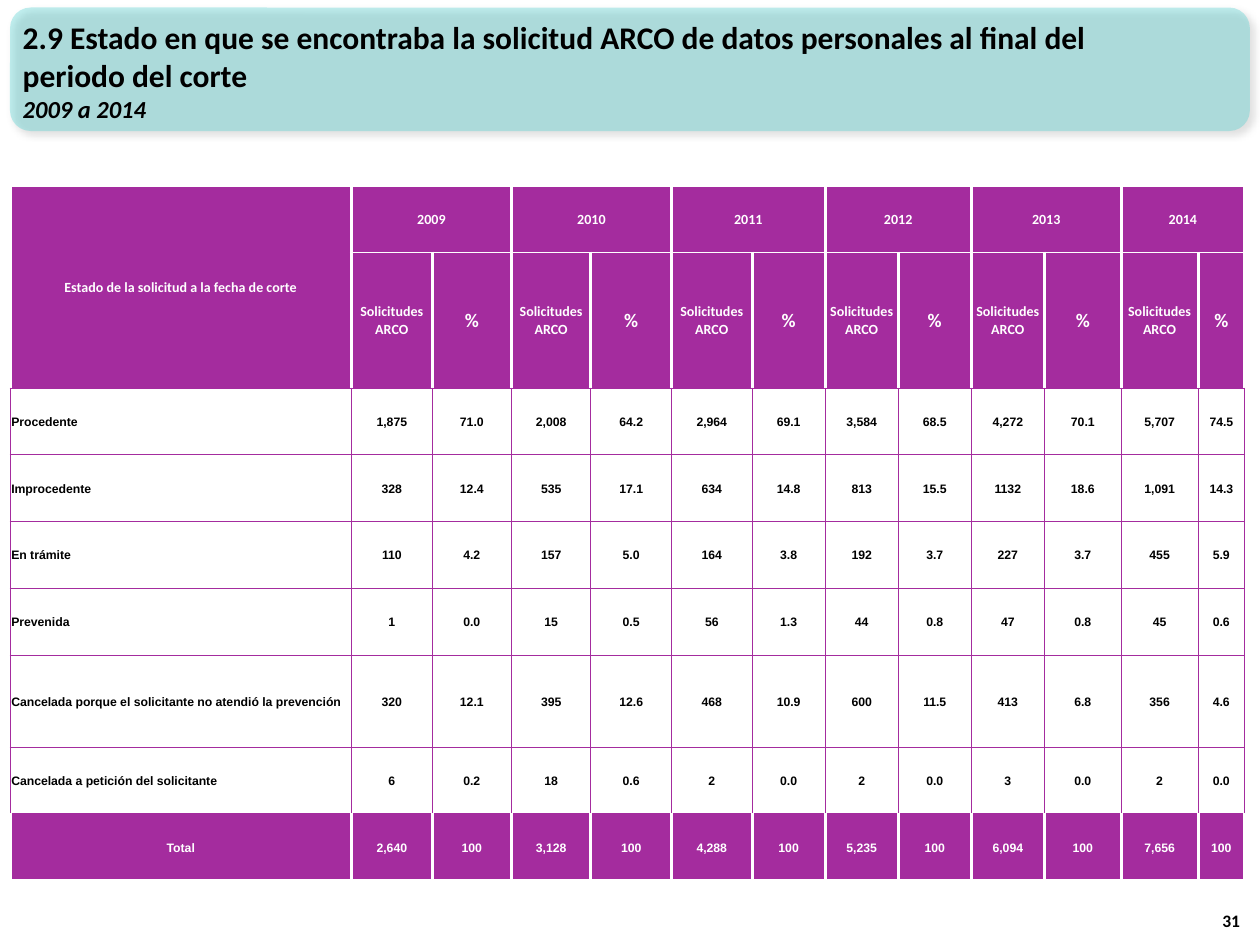
from lxml import etree
from pptx import Presentation
from pptx.dml.color import RGBColor
from pptx.enum.shapes import MSO_SHAPE
from pptx.enum.text import MSO_ANCHOR, MSO_AUTO_SIZE, PP_ALIGN
from pptx.oxml import parse_xml
from pptx.oxml.ns import nsdecls, qn
from pptx.util import Inches, Pt

LEFT, CENTER, RIGHT = PP_ALIGN.LEFT, PP_ALIGN.CENTER, PP_ALIGN.RIGHT
MIDDLE, BOTTOM = MSO_ANCHOR.MIDDLE, MSO_ANCHOR.BOTTOM
PURPLE, WHITE, BLACK = "A42C9E", "FFFFFF", "000000"


def style(p, size, color, font="Calibri", align=LEFT, italic=False):
    p.alignment = align
    p.font.name, p.font.size = font, Pt(size)
    p.font.bold, p.font.italic = True, italic
    p.font.color.rgb = RGBColor.from_string(color)


def border(cell, side, color, width):
    cell._tc.get_or_add_tcPr().append(parse_xml(
        f'<a:ln{side} {nsdecls("a")} w="{Pt(width)}"><a:solidFill>'
        f'<a:srgbClr val="{color}"/></a:solidFill></a:ln{side}>'))


prs = Presentation()
prs.slide_width, prs.slide_height = Inches(10), Inches(7.5)
s = prs.slides.add_slide(prs.slide_layouts[5])

banner = s.shapes.add_shape(MSO_SHAPE.ROUNDED_RECTANGLE, Inches(0.08), Inches(0.06),
                            Inches(9.84), Inches(0.98))
banner.fill.solid()
banner.fill.fore_color.rgb = RGBColor.from_string("33CCCC")
banner.line.fill.background()
fill_color = banner._element.spPr.find(qn("a:solidFill"))[0]
etree.SubElement(fill_color, qn("a:alpha"), val="30000")
banner._element.spPr.append(parse_xml(
    f'<a:effectLst {nsdecls("a")}><a:outerShdw blurRad="{Pt(4)}" dist="{Pt(3)}" '
    f'dir="2700000" algn="tl" rotWithShape="0"><a:srgbClr val="{BLACK}">'
    '<a:alpha val="40000"/></a:srgbClr></a:outerShdw></a:effectLst>'))
s.shapes._spTree.insert(2, banner._element)

title = s.shapes.title
title.left, title.top = Inches(0.08), Inches(0.09)
title.width, title.height = Inches(9.17), Inches(0.94)
tf = title.text_frame
tf.word_wrap, tf.auto_size, tf.vertical_anchor = True, MSO_AUTO_SIZE.NONE, MIDDLE
tf.text = ("2.9 Estado en que se encontraba la solicitud ARCO de datos personales "
           "al final del periodo del corte\n2009 a 2014")
style(tf.paragraphs[0], 18, BLACK)
style(tf.paragraphs[1], 14, BLACK, italic=True)

years = ["2009", "2010", "2011", "2012", "2013", "2014"]
header = ["Estado de la solicitud a la fecha de corte"]
for year in years:
    header += [year, ""]
rows = [
    header,
    [""] + ["Solicitudes ARCO", "%"] * len(years),
    ["Procedente", "1,875", "71.0", "2,008", "64.2", "2,964", "69.1",
     "3,584", "68.5", "4,272", "70.1", "5,707", "74.5"],
    ["Improcedente", "328", "12.4", "535", "17.1", "634", "14.8",
     "813", "15.5", "1132", "18.6", "1,091", "14.3"],
    ["En trámite", "110", "4.2", "157", "5.0", "164", "3.8",
     "192", "3.7", "227", "3.7", "455", "5.9"],
    ["Prevenida", "1", "0.0", "15", "0.5", "56", "1.3",
     "44", "0.8", "47", "0.8", "45", "0.6"],
    ["Cancelada porque el solicitante no atendió la prevención",
     "320", "12.1", "395", "12.6", "468", "10.9",
     "600", "11.5", "413", "6.8", "356", "4.6"],
    ["Cancelada a petición del solicitante", "6", "0.2", "18", "0.6", "2", "0.0",
     "2", "0.0", "3", "0.0", "2", "0.0"],
    ["Total", "2,640", "100", "3,128", "100", "4,288", "100",
     "5,235", "100", "6,094", "100", "7,656", "100"],
]
widths = [2.71, 0.64, 0.63, 0.63, 0.64, 0.64, 0.58, 0.58, 0.58, 0.58, 0.61, 0.61, 0.37]
heights = [0.53, 1.08, 0.53, 0.53, 0.53, 0.53, 0.73, 0.53, 0.53]
total = len(rows) - 1

table = s.shapes.add_table(len(rows), len(widths), Inches(0.08), Inches(1.47),
                           Inches(9.8), Inches(5.51)).table
table.first_row = table.horz_banding = False
for column, width in zip(table.columns, widths):
    column.width = Inches(width)
for row, height in zip(table.rows, heights):
    row.height = Inches(height)

for i, row in enumerate(rows):
    for j, text in enumerate(row):
        cell = table.cell(i, j)
        cell.margin_left = cell.margin_right = cell.margin_top = Inches(0.01)
        cell.margin_bottom = 0
        cell.vertical_anchor = MIDDLE
        cell.text = text
        colored = i < 2 or i == total
        side = (WHITE, 2) if colored else (PURPLE, 0.5)
        top = bottom = (PURPLE, 0.5)
        if i == 0:
            top = (WHITE, 2)
        if j and i < 2:
            top, bottom = [((WHITE, 2), (WHITE, 0.5)), ((WHITE, 0.5), (PURPLE, 0.5))][i]
        if i == total:
            bottom = (WHITE, 2)
        for name, line in zip("LRTB", (side, side, top, bottom)):
            border(cell, name, *line)
        if colored:
            cell.fill.solid()
            cell.fill.fore_color.rgb = RGBColor.from_string(PURPLE)
        else:
            cell.fill.background()
        size = 11 if text == "%" else 8 if i < 2 else 7
        style(cell.text_frame.paragraphs[0], size, WHITE if colored else BLACK,
              "Calibri" if i < 2 else "Arial", CENTER if j or colored else LEFT)

table.cell(0, 0).merge(table.cell(1, 0))
for j in range(1, len(widths), 2):
    table.cell(0, j).merge(table.cell(0, j + 1))

number = s.shapes.add_textbox(Inches(9.54), Inches(7.04), Inches(0.4), Inches(0.4))
tf = number.text_frame
tf.word_wrap, tf.vertical_anchor = True, BOTTOM
tf.text = "31"
style(tf.paragraphs[0], 10, BLACK, align=RIGHT)

prs.save("out.pptx")
